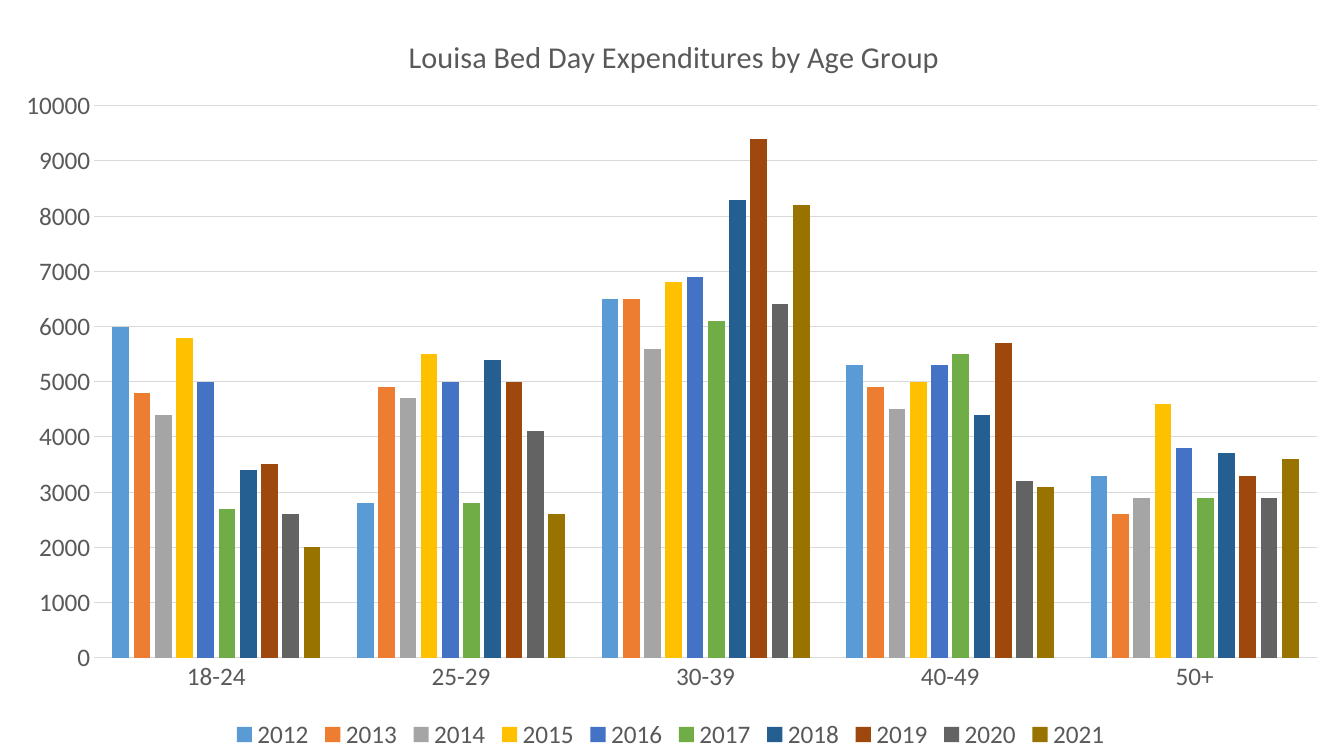
from lxml.etree import SubElement
from pptx import Presentation
from pptx.chart.data import CategoryChartData as ChartData
from pptx.dml.color import RGBColor as Color
from pptx.enum.chart import XL_CHART_TYPE as ChartType
from pptx.enum.chart import XL_LEGEND_POSITION as LegendPosition
from pptx.enum.chart import XL_TICK_MARK as TickMark
from pptx.oxml.ns import qn
from pptx.util import Pt

WIDTH, HEIGHT = 960, 540
COLORS = {
    "text": "595959",
    "line": "D9D9D9",
    "2012": "5B9BD5",
    "2013": "ED7D31",
    "2014": "A5A5A5",
    "2015": "FFC000",
    "2016": "4472C4",
    "2017": "70AD47",
    "2018": "255E91",
    "2019": "9E480E",
    "2020": "636363",
    "2021": "997300",
}
AGE_GROUPS = ["18-24", "25-29", "30-39", "40-49", "50+"]
EXPENDITURES = {
    "2012": [6000, 2800, 6500, 5300, 3300],
    "2013": [4800, 4900, 6500, 4900, 2600],
    "2014": [4400, 4700, 5600, 4500, 2900],
    "2015": [5800, 5500, 6800, 5000, 4600],
    "2016": [5000, 5000, 6900, 5300, 3800],
    "2017": [2700, 2800, 6100, 5500, 2900],
    "2018": [3400, 5400, 8300, 4400, 3700],
    "2019": [3500, 5000, 9400, 5700, 3300],
    "2020": [2600, 4100, 6400, 3200, 2900],
    "2021": [2000, 2600, 8200, 3100, 3600],
}


class ChartPage:
    def __init__(self, deck, font_name="Calibri", font_size=18):
        self.page = deck.slides.add_slide(deck.slide_layouts[6])
        self.font_name = font_name
        self.font_size = font_size

    def color(self, name):
        return Color.from_string(COLORS[name])

    def style_font(self, font, size=None):
        font.name = self.font_name
        font.size = Pt(size or self.font_size)
        font.bold = False
        font.color.rgb = self.color("text")

    def style_line(self, line):
        line.color.rgb = self.color("line")
        line.width = Pt(0.75)

    def place(self, element, **fractions):
        layout = element.find(qn("c:layout"))
        if layout is None:
            layout = SubElement(element, qn("c:layout"))
            element.remove(layout)
            first = element[0]
            if first.tag in (qn("c:tx"), qn("c:legendPos")):
                first.addnext(layout)
            else:
                element.insert(0, layout)
        for child in list(layout):
            layout.remove(child)
        manual = SubElement(layout, qn("c:manualLayout"))
        if "w" in fractions:
            SubElement(manual, qn("c:layoutTarget")).set("val", "inner")
        for side in "xy":
            SubElement(manual, qn(f"c:{side}Mode")).set("val", "edge")
        for name, fraction in fractions.items():
            SubElement(manual, qn(f"c:{name}")).set("val", str(fraction))

    def column_chart(self, categories, series_values):
        data = ChartData()
        data.categories = categories
        for name, values in series_values.items():
            data.add_series(name, values)
        chart = self.page.shapes.add_chart(
            ChartType.COLUMN_CLUSTERED, 0, 0, Pt(WIDTH), Pt(HEIGHT), data
        ).chart
        self.style_font(chart.font)
        plot = chart.plots[0]
        plot.gap_width = 219
        plot.overlap = -27
        plot.vary_by_categories = False
        for series in plot.series:
            series.format.fill.solid()
            series.format.fill.fore_color.rgb = self.color(series.name)
        plot_area = chart._chartSpace.chart.plotArea
        self.place(plot_area, x=0.07, y=0.14, w=0.91, h=0.73)
        return chart

    def title(self, chart, text):
        chart.has_title = True
        frame = chart.chart_title.text_frame
        frame.text = text
        self.style_font(frame.paragraphs[0].font, 21.6)
        chart.chart_title.include_in_layout = False
        self.place(chart.chart_title._element, x=0.3, y=0.04)

    def axes(self, chart, maximum, step):
        for axis in (chart.category_axis, chart.value_axis):
            axis.major_tick_mark = TickMark.NONE
            axis.minor_tick_mark = TickMark.NONE
            self.style_font(axis.tick_labels.font)
        self.style_line(chart.category_axis.format.line)
        values = chart.value_axis
        values.minimum_scale = 0
        values.maximum_scale = maximum
        values.major_unit = step
        values.format.line.fill.background()
        values.has_major_gridlines = True
        self.style_line(values.major_gridlines.format.line)

    def legend(self, chart):
        chart.has_legend = True
        chart.legend.position = LegendPosition.BOTTOM
        chart.legend.include_in_layout = False
        self.style_font(chart.legend.font)
        self.place(chart.legend._element, x=0.17, y=0.95)


def main():
    deck = Presentation()
    deck.slide_width, deck.slide_height = Pt(WIDTH), Pt(HEIGHT)
    page = ChartPage(deck)
    chart = page.column_chart(AGE_GROUPS, EXPENDITURES)
    page.title(chart, "Louisa Bed Day Expenditures by Age Group")
    page.axes(chart, maximum=10000, step=1000)
    page.legend(chart)
    deck.save("out.pptx")


if __name__ == "__main__":
    main()
